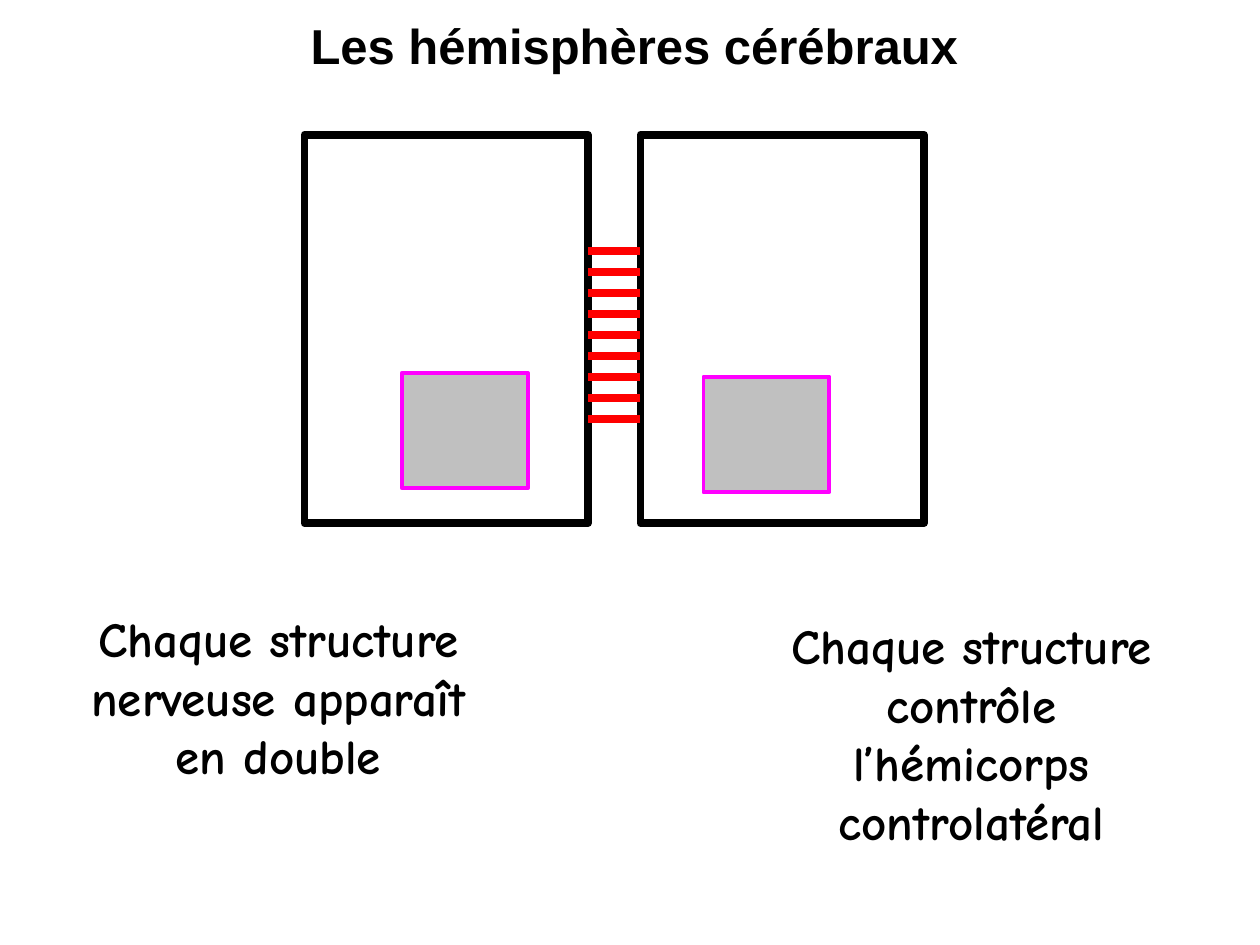
from lxml import etree
from pptx import Presentation
from pptx.dml.color import RGBColor
from pptx.enum import shapes, text
from pptx.oxml.ns import qn
from pptx.util import Pt

BLACK = RGBColor(0x00, 0x00, 0x00)
RED = RGBColor(0xFF, 0x00, 0x00)
MAGENTA = RGBColor(0xFF, 0x00, 0xFF)
GREY = RGBColor(0xC0, 0xC0, 0xC0)


def add_box(parent, x, y, w, h, line, width, fill=None):
    sp = parent.shapes.add_shape(
        shapes.MSO_SHAPE.RECTANGLE, Pt(x), Pt(y), Pt(w), Pt(h))
    sp.shadow.inherit = False
    if fill is None:
        sp.fill.background()
    else:
        sp.fill.solid()
        sp.fill.fore_color.rgb = fill
    sp.line.color.rgb = line
    sp.line.width = Pt(width)


def set_text(sp, content, font_name):
    tf = sp.text_frame
    frame_format = {
        "word_wrap": True,
        "auto_size": text.MSO_AUTO_SIZE.NONE,
        "vertical_anchor": text.MSO_ANCHOR.TOP,
    }
    for name, value in frame_format.items():
        setattr(tf, name, value)
    p = tf.paragraphs[0]
    p.alignment = text.PP_ALIGN.CENTER
    p.space_before = Pt(0)
    r = p.add_run()
    r.text = content
    for name, value in {"name": font_name, "size": Pt(28), "bold": True}.items():
        setattr(r.font, name, value)
    r.font.color.rgb = BLACK


prs = Presentation()
prs.slide_width, prs.slide_height = Pt(720), Pt(540)
s = prs.slides.add_slide(prs.slide_layouts[5])

title = s.shapes.title
title_place = {"left": 14.4, "top": 5, "width": 696, "height": 41}
for name, value in title_place.items():
    setattr(title, name, Pt(value))
set_text(title, "Les hémisphères cérébraux", "Arial")

hemispheres = s.shapes.add_group_shape()
for x in (174, 366):
    add_box(hemispheres, x, 77, 162, 222, BLACK, 4.5)

fibres = s.shapes.add_group_shape()
for i in range(9):
    y = 143.4 + 12 * i
    cx = fibres.shapes.add_connector(
        shapes.MSO_CONNECTOR.STRAIGHT, Pt(336), Pt(y), Pt(366), Pt(y))
    cx.line.color.rgb = RED
    cx.line.width = Pt(4.5)
    etree.SubElement(cx._element.spPr, qn("a:effectLst"))

for x, y, content in (
    (438, 348, "Chaque structure contrôle l’hémicorps controlatéral"),
    (42, 344, "Chaque structure nerveuse apparaît en double"),
):
    sp = s.shapes.add_textbox(Pt(x), Pt(y), Pt(234), Pt(176))
    set_text(sp, content, "Comic Neue")

for x, y in ((402, 215.3), (229.7, 213.1)):
    add_box(s, x, y, 72, 66, MAGENTA, 2.25, GREY)

prs.save("out.pptx")
